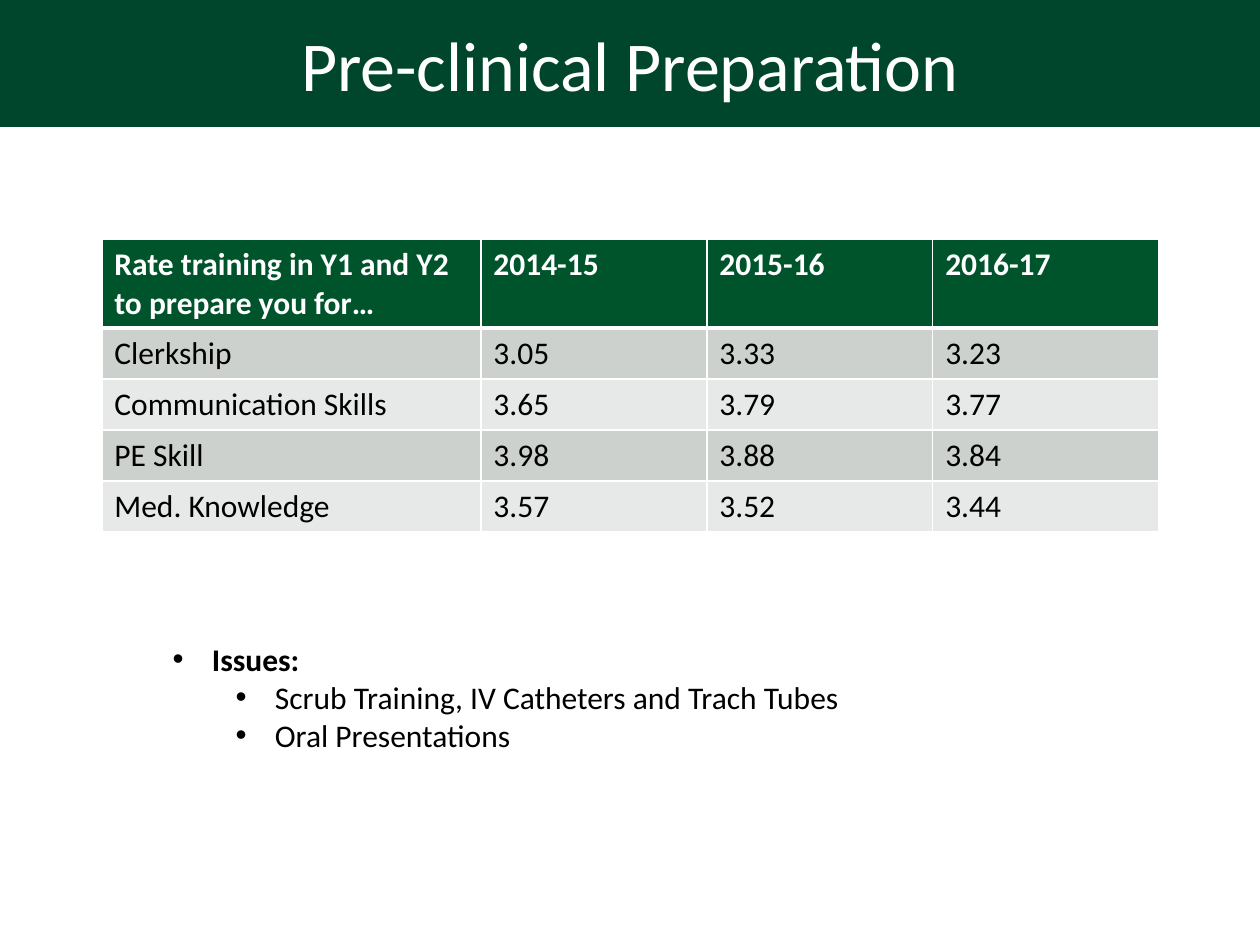
from dataclasses import dataclass
from typing import Any

from lxml.etree import SubElement
from pptx import Presentation
from pptx.dml.color import RGBColor
from pptx.enum.text import MSO_ANCHOR as Anchor, MSO_AUTO_SIZE as AutoSize, PP_ALIGN as Align
from pptx.oxml.ns import qn
from pptx.util import Pt


def rgb(color):
    return RGBColor.from_string(color)


@dataclass
class SlideBuilder:
    s: Any
    font: str = "Calibri"
    white: str = "FFFFFF"
    black: str = "000000"
    banner: str = "00462D"
    header: str = "00542C"
    bands: tuple = ("CCD1CD", "E7E9E8")

    def place(self, sp, left, top, width, height):
        box = {"left": left, "top": top, "width": width, "height": height}
        for name, value in box.items():
            setattr(sp, name, Pt(value))

    def add_text(self, p, text, color, size=18, bold=False):
        r = p.add_run()
        r.text = text
        style = {"name": self.font, "size": Pt(size), "bold": bold}
        for name, value in style.items():
            setattr(r.font, name, value)
        r.font.color.rgb = rgb(color)

    def title(self, text, *box):
        sp = self.s.shapes.title
        self.place(sp, *box)
        sp.fill.solid()
        sp.fill.fore_color.rgb = rgb(self.banner)
        tf = sp.text_frame
        tf.vertical_anchor = Anchor.MIDDLE
        p = tf.paragraphs[0]
        p.alignment = Align.CENTER
        self.add_text(p, text, self.white, 40)

    def borders(self, cell, bottom):
        tcPr = cell._tc.get_or_add_tcPr()
        widths = {"lnL": 1, "lnR": 1, "lnT": 1, "lnB": bottom}
        for side, width in widths.items():
            ln = SubElement(tcPr, qn(f"a:{side}"), w=str(Pt(width)))
            fill = SubElement(ln, qn("a:solidFill"))
            SubElement(fill, qn("a:srgbClr"), val=self.white)

    def table(self, rows, left, top, widths, heights):
        frame = self.s.shapes.add_table(
            len(rows), len(widths), Pt(left), Pt(top), Pt(sum(widths)), Pt(sum(heights)))
        table = frame.table
        for column, width in zip(table.columns, widths):
            column.width = Pt(width)
        for i, (row, height) in enumerate(zip(rows, heights)):
            table.rows[i].height = Pt(height)
            is_header = i == 0
            fill = self.header if is_header else self.bands[(i - 1) % 2]
            color = self.white if is_header else self.black
            for j, text in enumerate(row):
                cell = table.cell(i, j)
                self.borders(cell, 3 if is_header else 1)
                cell.fill.solid()
                cell.fill.fore_color.rgb = rgb(fill)
                self.add_text(cell.text_frame.paragraphs[0], text, color, bold=is_header)

    def bullets(self, items, *box):
        sp = self.s.placeholders[1]
        self.place(sp, *box)
        tf = sp.text_frame
        tf.auto_size = AutoSize.SHAPE_TO_FIT_TEXT
        for i, (level, text) in enumerate(items):
            p = tf.add_paragraph() if i else tf.paragraphs[0]
            p.level = level
            p.space_before = Pt(0)
            pPr = p._p.get_or_add_pPr()
            pPr.set("marL", str(Pt(22.5 + 36 * level)))
            pPr.set("indent", str(Pt(-22.5)))
            SubElement(pPr, qn("a:buFont"), typeface="Arial")
            SubElement(pPr, qn("a:buChar"), char="•")
            self.add_text(p, text, self.black, bold=level == 0)


def main():
    prs = Presentation()
    prs.slide_width, prs.slide_height = Pt(720), Pt(540)
    slide = SlideBuilder(prs.slides.add_slide(prs.slide_layouts[1]))
    slide.title("Pre-clinical Preparation", 0, 0, 720, 72.6)
    ratings = [
        ("Rate training in Y1 and Y2 to prepare you for…", "2014-15", "2015-16", "2016-17"),
        ("Clerkship", "3.05", "3.33", "3.23"),
        ("Communication Skills", "3.65", "3.79", "3.77"),
        ("PE Skill", "3.98", "3.88", "3.84"),
        ("Med. Knowledge", "3.57", "3.52", "3.44"),
    ]
    slide.table(ratings, 58.2, 136.9, [216.6] + [129.1] * 3, [50.4] + [29.2] * 4)
    issues = [
        (0, "Issues:"),
        (1, "Scrub Training, IV Catheters and Trach Tubes"),
        (1, "Oral Presentations"),
    ]
    slide.bullets(issues, 91.4, 362.2, 524.2, 72.7)
    prs.save("out.pptx")


if __name__ == "__main__":
    main()
